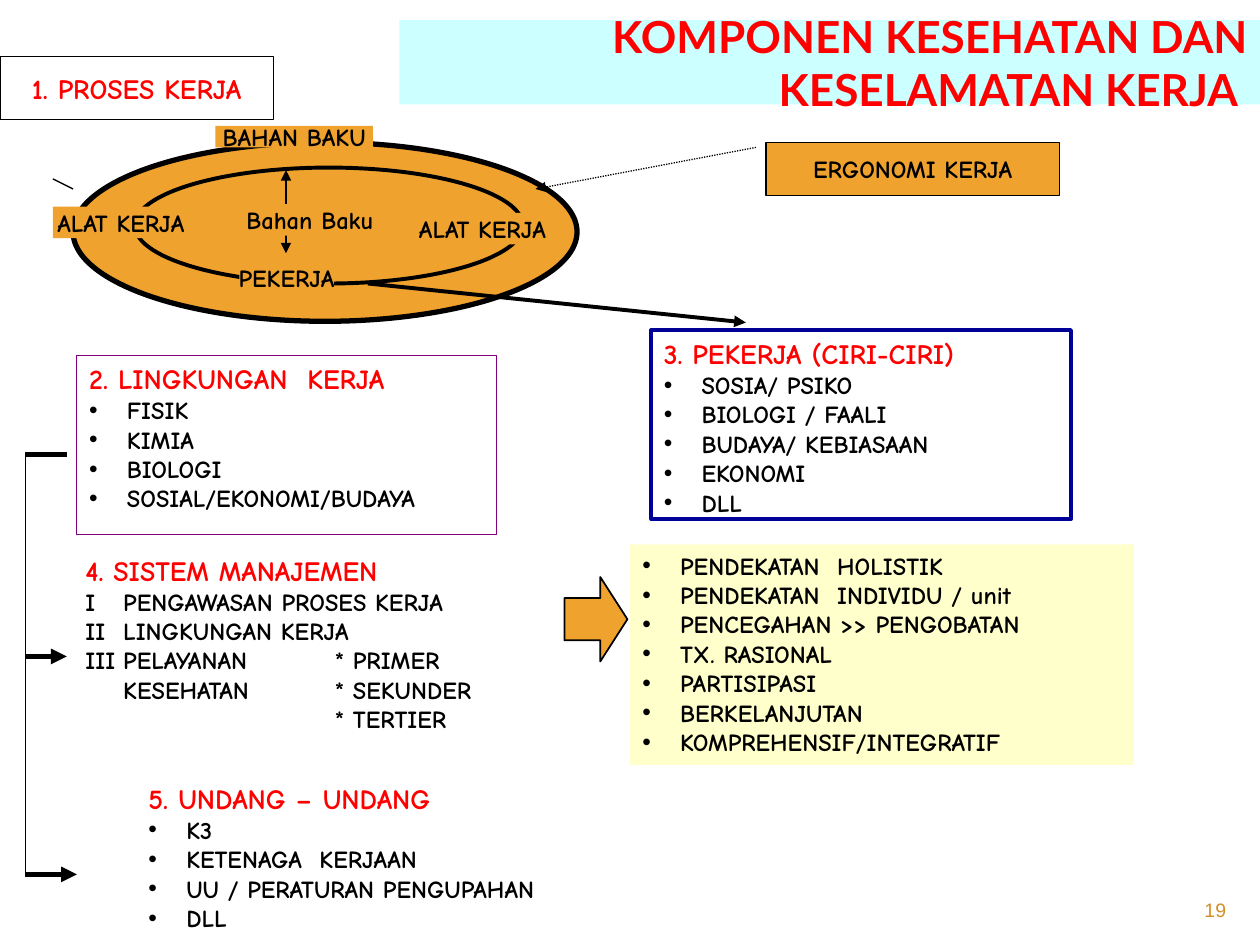
from lxml import etree
from pptx import Presentation
from pptx.dml.color import RGBColor
from pptx.enum.dml import MSO_LINE
from pptx.enum.shapes import MSO_CONNECTOR, MSO_SHAPE
from pptx.enum.text import MSO_ANCHOR, PP_ALIGN
from pptx.oxml.ns import qn
from pptx.util import Inches, Pt

RECT, OVAL, ARROW = MSO_SHAPE.RECTANGLE, MSO_SHAPE.OVAL, MSO_SHAPE.RIGHT_ARROW
LEFT, CENTER, RIGHT = PP_ALIGN.LEFT, PP_ALIGN.CENTER, PP_ALIGN.RIGHT
TOP, MIDDLE = MSO_ANCHOR.TOP, MSO_ANCHOR.MIDDLE
DOTTED = MSO_LINE.ROUND_DOT
BLACK = RGBColor(0x00, 0x00, 0x00)
WHITE = RGBColor(0xFF, 0xFF, 0xFF)
RED = RGBColor(0xFF, 0x00, 0x00)
ORANGE = RGBColor(0xF0, 0xA2, 0x2E)
GOLD = RGBColor(0xD4, 0x8F, 0x29)
CYAN = RGBColor(0xCC, 0xFF, 0xFF)
CREAM = RGBColor(0xFF, 0xFF, 0xCC)
PURPLE = RGBColor(0x80, 0x00, 0x80)
NAVY = RGBColor(0x00, 0x00, 0x99)
HAND = "Comic Neue"
BULLET_INDENT = 0.3
TAB_STOPS = (0.3, 1.98)

# Content: boxes are (left, top, width, height)
TITLE = "KOMPONEN KESEHATAN DAN KESELAMATAN KERJA "
ELLIPSES = [((0.58, 1.13, 4, 1.42), 3), ((1.07, 1.33, 3.08, 0.92), 2.25)]
RING_LABELS = [
    ("BAHAN BAKU", (1.71, 1, 1.25, 0.17)),
    ("PEKERJA", (1.9, 2.08, 0.75, 0.25)),
    ("ALAT KERJA", (3.33, 1.69, 1, 0.25)),
    ("ALAT KERJA", (0.42, 1.64, 1.08, 0.25)),
]
# Panels: box, fill, line colour, line width, heading, items, bulleted
PANELS = [
    ((0.61, 2.82, 3.33, 1.42), WHITE, PURPLE, 0.75, "2. LINGKUNGAN  KERJA",
     ["FISIK", "KIMIA", "BIOLOGI", "SOSIAL/EKONOMI/BUDAYA"], True),
    ((5.17, 2.62, 3.33, 1.5), WHITE, NAVY, 2.25, "3. PEKERJA (CIRI-CIRI)",
     ["SOSIA/ PSIKO", "BIOLOGI / FAALI", "BUDAYA/ KEBIASAAN", "EKONOMI", "DLL"], True),
    ((0.58, 4.34, 4.5, 1.75), WHITE, None, 0, "4. SISTEM MANAJEMEN",
     ["I\tPENGAWASAN PROSES KERJA", "II\tLINGKUNGAN KERJA",
      "III\tPELAYANAN\t* PRIMER", "\tKESEHATAN\t* SEKUNDER", "\t\t* TERTIER"], False),
    ((5, 4.32, 4, 1.75), CREAM, None, 0, None,
     ["PENDEKATAN  HOLISTIK", "PENDEKATAN  INDIVIDU / unit", "PENCEGAHAN >> PENGOBATAN",
      "TX. RASIONAL", "PARTISIPASI", "BERKELANJUTAN", "KOMPREHENSIF/INTEGRATIF"], True),
    ((1.08, 6.15, 3.92, 1.25), WHITE, None, 0, "5. UNDANG – UNDANG",
     ["K3", "KETENAGA  KERJAAN", "UU / PERATURAN PENGUPAHAN", "DLL"], True),
]
# Bracket on the left: spine x, then (y, tip x, arrow) for each branch
SPINE_X = 0.2
BRANCHES = [(3.61, 0.53, False), (5.21, 0.53, True), (6.94, 0.61, True)]

prs = Presentation()
prs.slide_width, prs.slide_height = Inches(10), Inches(7.5)
s = prs.slides.add_slide(prs.slide_layouts[6])


def add_box(box, fill=None, line=None, width=0.75, kind=RECT):
    sp = s.shapes.add_shape(kind, *map(Inches, box))
    sp.shadow.inherit = False
    if fill is None:
        sp.fill.background()
    else:
        sp.fill.solid()
        sp.fill.fore_color.rgb = fill
    if line is None:
        sp.line.fill.background()
    else:
        sp.line.color.rgb = line
        sp.line.width = Pt(width)
    return sp


def add_text(tf, text, size=14, color=BLACK, font=HAND, bold=True, align=CENTER,
             anchor=MIDDLE, wrap=False, first=True):
    tf.word_wrap, tf.vertical_anchor = wrap, anchor
    p = tf.paragraphs[0] if first else tf.add_paragraph()
    p.alignment = align
    r = p.add_run()
    r.text = text
    r.font.size, r.font.name, r.font.bold = Pt(size), font, bold
    r.font.color.rgb = color
    return p


def add_bullet(p):
    ppr = p._p.get_or_add_pPr()
    ppr.set("marL", str(Inches(BULLET_INDENT)))
    ppr.set("indent", str(-Inches(BULLET_INDENT)))
    etree.SubElement(ppr, qn("a:buFont"), typeface="Arial")
    etree.SubElement(ppr, qn("a:buChar"), char="•")


def add_tabs(p):
    tabs = etree.SubElement(p._p.get_or_add_pPr(), qn("a:tabLst"))
    for stop in TAB_STOPS:
        etree.SubElement(tabs, qn("a:tab"), pos=str(Inches(stop)), algn="l")


def add_line(x1, y1, x2, y2, width=0.75, ends=(), dash=None):
    c = s.shapes.add_connector(MSO_CONNECTOR.STRAIGHT, *map(Inches, (x1, y1, x2, y2)))
    c.line.color.rgb = BLACK
    c.line.width = Pt(width)
    if dash:
        c.line.dash_style = dash
    for end in ends:
        etree.SubElement(c.line._get_or_add_ln(), qn("a:" + end), type="triangle")
    etree.SubElement(c._element.spPr, qn("a:effectLst"))


def add_label(text, box, fill=ORANGE, line=None, **fmt):
    add_text(add_box(box, fill, line).text_frame, text, **fmt)


# Title band
add_label(TITLE, (3.17, 0.16, 6.83, 0.67), CYAN, size=25.2, color=RED, font="Lato",
          align=RIGHT, wrap=True)

# Work process rings
for box, width in ELLIPSES:
    add_box(box, ORANGE, BLACK, width, OVAL)
for text, box in RING_LABELS:
    add_label(text, box)
add_line(2.27, 1.35, 2.27, 2.01, ends=("headEnd", "tailEnd"))
add_label("Bahan Baku", (2, 1.62, 0.92, 0.25))

# Labels and lines around the rings
add_label("ERGONOMI KERJA", (6.08, 1.13, 2.33, 0.42), line=BLACK)
add_line(6, 1.17, 4.25, 1.5, ends=("tailEnd",), dash=DOTTED)
add_label("1. PROSES KERJA", (0, 0.45, 2.17, 0.5), WHITE, BLACK, size=16, color=RED)
add_line(2.92, 2.25, 5.92, 2.56, 2.25, ends=("tailEnd",))
add_line(0.58, 1.5, 0.42, 1.42)

# Component panels
for box, fill, line, width, heading, items, bulleted in PANELS:
    tf = add_box(box, fill, line, width).text_frame
    body = dict(align=LEFT, anchor=TOP, wrap=True)
    if heading:
        add_text(tf, heading, size=16, color=RED, **body)
    for i, item in enumerate(items):
        p = add_text(tf, item, first=not heading and i == 0, **body)
        if bulleted:
            add_bullet(p)
        else:
            add_tabs(p)

# Left bracket
add_line(SPINE_X, BRANCHES[0][0], SPINE_X, BRANCHES[-1][0])
for y, tip, arrow in BRANCHES:
    add_line(SPINE_X, y, tip, y, 3, ends=("tailEnd",) if arrow else ())

# Block arrow and page number
arrow = add_box((4.48, 4.58, 0.5, 0.67), ORANGE, BLACK, 1, ARROW)
arrow.adjustments[0], arrow.adjustments[1] = 0.5, 0.43
tb = s.shapes.add_textbox(*map(Inches, (9, 7.08, 0.83, 0.27)))
add_text(tb.text_frame, "19", size=11.1, color=GOLD, font="Arial", bold=False,
         align=RIGHT, anchor=TOP, wrap=True)

prs.save("out.pptx")
